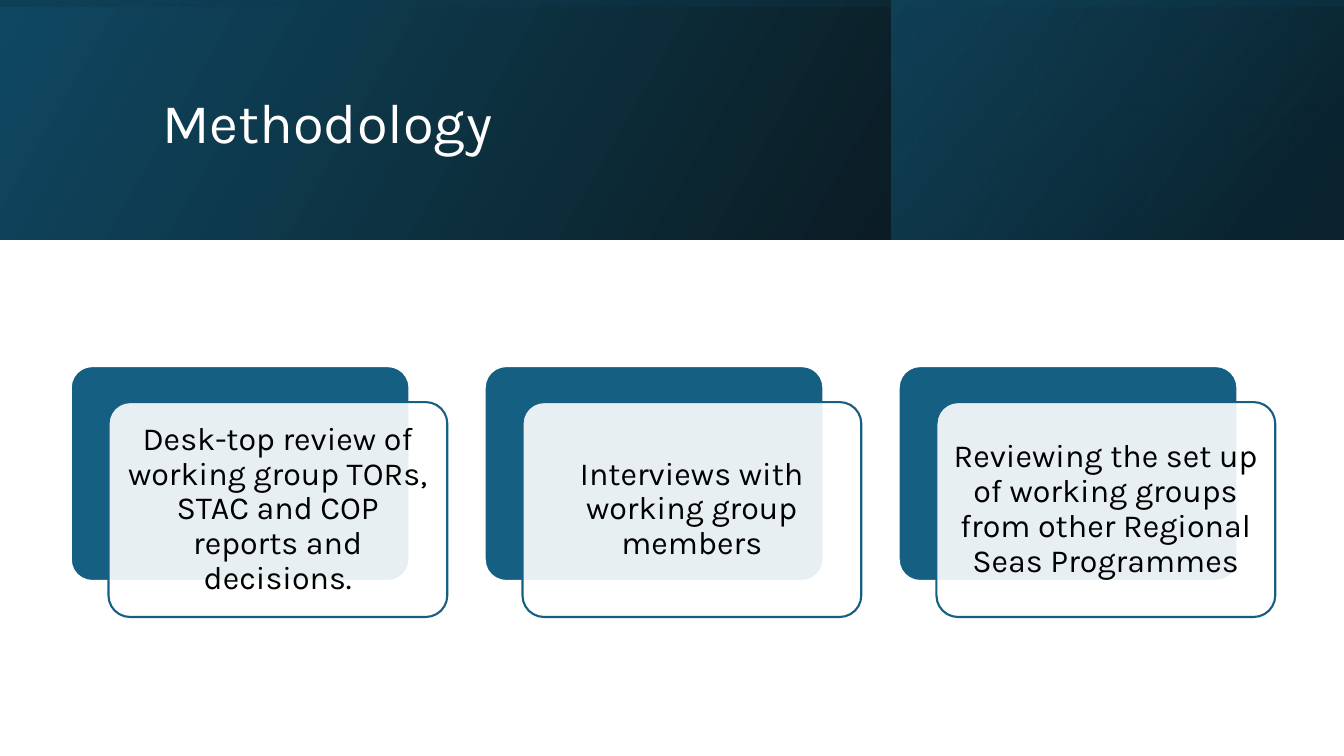
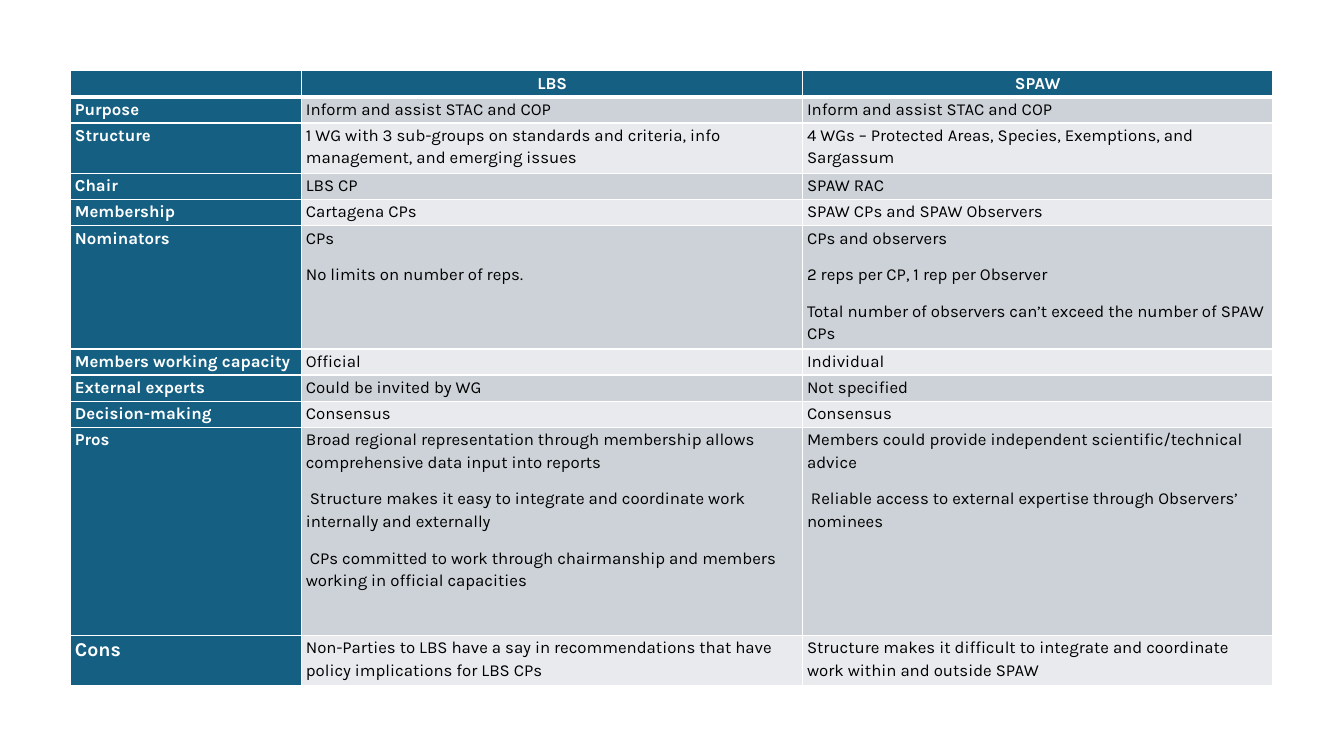
from dataclasses import dataclass

from lxml.etree import SubElement
from pptx import Presentation
from pptx.dml.color import RGBColor
from pptx.enum.shapes import MSO_SHAPE as Preset
from pptx.enum.text import MSO_ANCHOR as Anchor, PP_ALIGN as Align
from pptx.oxml.ns import qn
from pptx.util import Pt


@dataclass(frozen=True)
class Theme:
    font: str = "Karla"
    white: str = "FFFFFF"
    black: str = "000000"
    teal: str = "156082"
    navy: str = "104862"
    deep: str = "0B3041"
    odd_row: str = "CCD2D8"
    even_row: str = "E8EAED"
    title_size: int = 40
    card_size: int = 23
    table_size: int = 12
    large_label_size: int = 14


THEME = Theme()

CARDS = [
    "Desk-top review of working group TORs, STAC and COP reports and decisions.",
    "Interviews with working group members",
    "Reviewing the set up of working groups from other Regional Seas Programmes",
]

# Row height, then the cells; each line of a cell is a paragraph
ROWS = [
    (18.7, "", "LBS", "SPAW"),
    (18.7, "Purpose", "Inform and assist STAC and COP", "Inform and assist STAC and COP"),
    (36, "Structure",
     "1 WG with 3 sub-groups on standards and criteria, info management, and emerging issues",
     "4 WGs – Protected Areas, Species, Exemptions, and Sargassum"),
    (18.7, "Chair", "LBS CP", "SPAW RAC"),
    (18.7, "Membership", "Cartagena CPs", "SPAW CPs and SPAW Observers"),
    (88, "Nominators",
     "CPs\nNo limits on number of reps.",
     "CPs and observers\n2 reps per CP, 1 rep per Observer\n"
     "Total number of observers can’t exceed the number of SPAW CPs"),
    (18.7, "Members working capacity", "Official", "Individual"),
    (18.7, "External experts", "Could be invited by WG", "Not specified"),
    (18.7, "Decision-making", "Consensus", "Consensus"),
    (148.5, "Pros",
     "Broad regional representation through membership allows comprehensive data input into reports\n"
     " Structure makes it easy to integrate and coordinate work internally and externally\n"
     " CPs committed to work through chairmanship and members working in official capacities",
     "Members could provide independent scientific/technical advice\n"
     " Reliable access to external expertise through Observers’ nominees"),
    (36, "Cons",
     "Non-Parties to LBS have a say in recommendations that have policy implications for LBS CPs",
     "Structure makes it difficult to integrate and coordinate work within and outside SPAW"),
]


def rgb(color):
    return RGBColor.from_string(color)


def set_alpha(color_element, percent):
    SubElement(color_element, qn("a:alpha"), val=str(percent * 1000))


def style_para(para, size, color, bold=False, align=Align.LEFT, spacing=0.9, after=0):
    para.alignment = align
    para.line_spacing = spacing
    para.space_after = Pt(after)
    font = para.font
    font.name, font.size, font.bold = THEME.font, Pt(size), bold
    font.color.rgb = rgb(color)


def add_box(page, preset, left, top, width, height):
    box = page.shapes.add_shape(preset, Pt(left), Pt(top), Pt(width), Pt(height))
    box.shadow.inherit = False
    return box


def add_gradient_box(page, left, top, width, height, stops, angle):
    """Stops are (position, color, opacity in percent); the angle runs clockwise."""
    box = add_box(page, Preset.RECTANGLE, left, top, width, height)
    box.line.fill.background()
    box.fill.gradient()
    box.fill.gradient_angle = 360 - angle
    for stop, (position, color, _) in zip(box.fill.gradient_stops, stops):
        stop.position = position
        stop.color.rgb = rgb(color)
    colors = box.element.spPr.iter(qn("a:srgbClr"))
    for element, (_, _, opacity) in zip(list(colors), stops):
        set_alpha(element, opacity)


def add_title_band(page, left, top, width, height, title):
    # Base, right-hand panel and a wash over both
    panel = 323
    add_gradient_box(page, left, top, width, height,
                     [(0, THEME.navy, 100), (1, THEME.black, 96)], 30)
    add_gradient_box(page, left + width - panel, top, panel, height,
                     [(0, THEME.teal, 48), (0.81, THEME.deep, 68)], 40)
    add_gradient_box(page, left, top, width, height,
                     [(0.23, THEME.navy, 16), (0.99, THEME.black, 45)], 100)
    # Title
    box = page.shapes.add_textbox(Pt(left + 109), Pt(top + 27.5), Pt(765), Pt(124))
    frame = box.text_frame
    frame.word_wrap = True
    frame.vertical_anchor = Anchor.MIDDLE
    frame.text = title
    style_para(frame.paragraphs[0], THEME.title_size, THEME.white)


def add_card(page, left, top, width, height, text):
    back = add_box(page, Preset.ROUNDED_RECTANGLE, left, top, width, height)
    front = add_box(page, Preset.ROUNDED_RECTANGLE, left + 27, top + 25.7, width, height)
    for box, fill, line in ((back, THEME.teal, THEME.white), (front, THEME.white, THEME.teal)):
        box.adjustments[0] = 0.1
        box.fill.solid()
        box.fill.fore_color.rgb = rgb(fill)
        box.line.color.rgb = rgb(line)
        box.line.width = Pt(1.5)
    set_alpha(next(front.element.spPr.iter(qn("a:srgbClr"))), 90)

    frame = front.text_frame
    frame.word_wrap = True
    frame.vertical_anchor = Anchor.MIDDLE
    frame.margin_left = frame.margin_right = frame.margin_top = frame.margin_bottom = Pt(7.2)
    frame.text = text
    style_para(frame.paragraphs[0], THEME.card_size, THEME.black, align=Align.CENTER)


def set_borders(cell, bottom):
    properties = cell._tc.get_or_add_tcPr()
    widths = {"a:lnL": 1, "a:lnR": 1, "a:lnT": 1, "a:lnB": bottom}
    for index, (tag, width) in enumerate(widths.items()):
        line = SubElement(properties, qn(tag), w=str(Pt(width)))
        fill = SubElement(line, qn("a:solidFill"))
        SubElement(fill, qn("a:srgbClr"), val=THEME.white)
        properties.insert(index, line)


def fill_cell(cell, text, row, column):
    is_header, is_label = row == 0, column == 0
    strong = is_header or is_label
    cell.fill.solid()
    band = THEME.odd_row if row % 2 else THEME.even_row
    cell.fill.fore_color.rgb = rgb(THEME.teal if strong else band)
    cell.margin_left = cell.margin_right = Pt(3)
    cell.margin_top = cell.margin_bottom = Pt(0)
    set_borders(cell, 3 if is_header else 1)
    cell.text = text
    for para in cell.text_frame.paragraphs:
        style_para(para,
                   THEME.large_label_size if text == "Cons" else THEME.table_size,
                   THEME.white if strong else THEME.black, strong,
                   Align.CENTER if is_header else Align.LEFT, 1.15, 10)


def add_comparison_table(page, left, top, column_widths, rows):
    height = sum(row[0] for row in rows)
    table = page.shapes.add_table(len(rows), len(column_widths), Pt(left), Pt(top),
                                  Pt(sum(column_widths)), Pt(height)).table
    for column, width in zip(table.columns, column_widths):
        column.width = Pt(width)
    for row, (row_height, *texts) in enumerate(rows):
        table.rows[row].height = Pt(row_height)
        for column, text in enumerate(texts):
            fill_cell(table.cell(row, column), text, row, column)


def build_methodology(page, width):
    add_title_band(page, 0, 0, width, 171, "Methodology")
    for index, text in enumerate(CARDS):
        add_card(page, 50.5 + index * 295.7, 261.5, 242, 153.5, text)


def build_comparison(page):
    add_comparison_table(page, 50.5, 50.5, [165, 358, 335.5], ROWS)


def main():
    deck = Presentation()
    deck.slide_width, deck.slide_height = Pt(960), Pt(540)
    blank = deck.slide_layouts[6]
    build_methodology(deck.slides.add_slide(blank), 960)
    build_comparison(deck.slides.add_slide(blank))
    deck.save("out.pptx")


if __name__ == "__main__":
    main()
